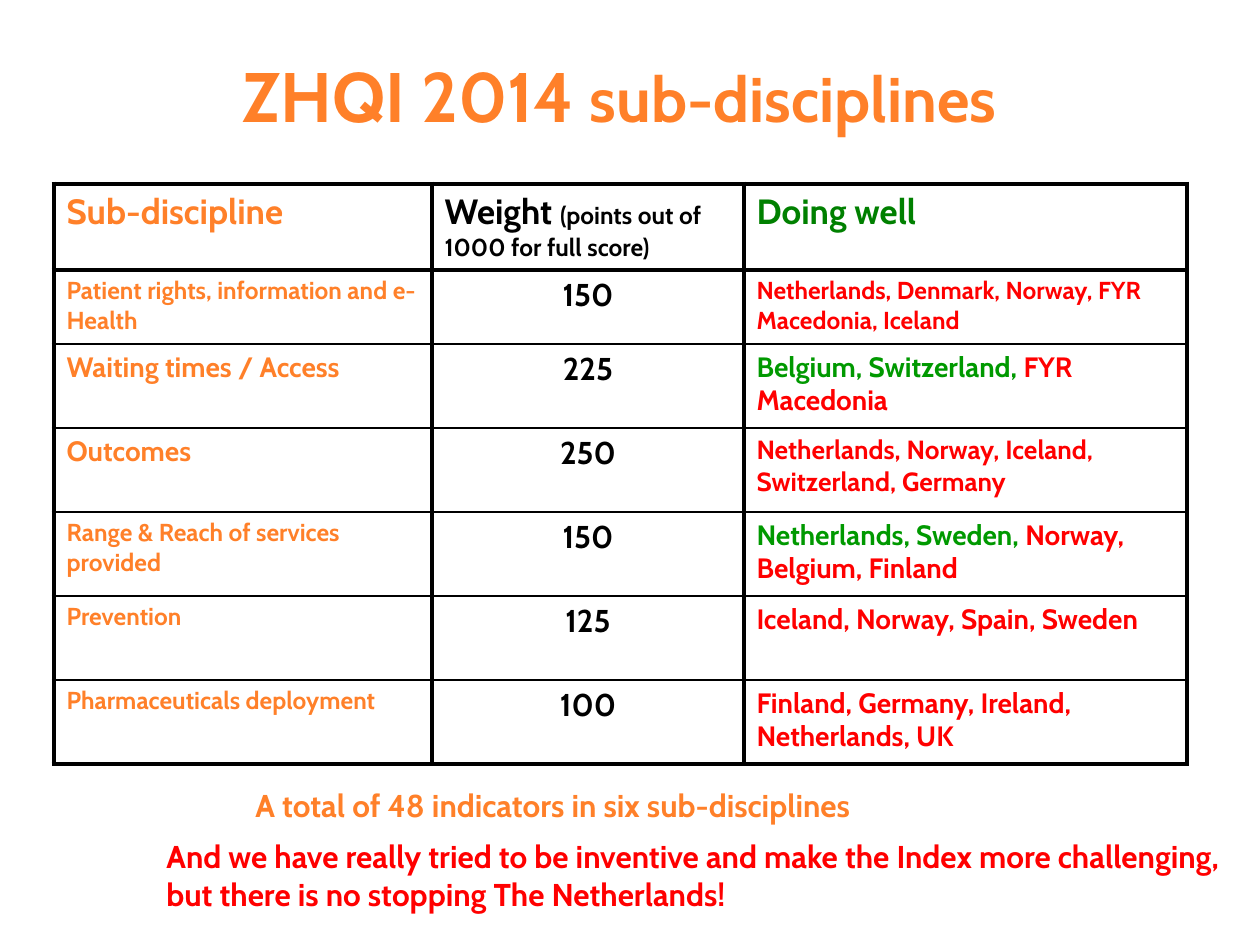
from lxml import etree
from pptx import Presentation
from pptx.dml.color import RGBColor
from pptx.enum.text import MSO_ANCHOR, MSO_AUTO_SIZE, PP_ALIGN
from pptx.oxml.ns import qn
from pptx.util import Pt

PX = 914400 // 126
FONT = "Cabin"
COLORS = {"orange": "FF8029", "black": "000000", "red": "FF0000",
          "heading green": "008000", "green": "009900", "white": "FFFFFF"}

# Content: each text is a list of (wording, size, colour) runs
TITLE = [("ZHQI 2014 ", 40, "orange"), ("sub-disciplines", 36, "orange")]
HEADINGS = [
    [("Sub-discipline", 20, "orange")],
    [("Weight ", 20, "black"), ("(points out of 1000 for full score)", 14, "black")],
    [("Doing well", 20, "heading green")],
]
# Sub-discipline, its text size, weight, countries doing well
DISCIPLINES = [
    ("Patient rights, information and e-Health", 14, 150,
     [("Netherlands, Denmark, Norway, FYR Macedonia, Iceland", 14, "red")]),
    ("Waiting times / Access", 16, 225,
     [("Belgium, Switzerland, ", 16, "green"), ("FYR Macedonia", 16, "red")]),
    ("Outcomes", 16, 250,
     [("Netherlands, Norway, Iceland, Switzerland, Germany", 15, "red")]),
    ("Range & Reach of services provided", 14, 150,
     [("Netherlands, Sweden, ", 16, "green"), ("Norway, Belgium, Finland", 16, "red")]),
    ("Prevention", 14, 125, [("Iceland, Norway, Spain, Sweden", 16, "red")]),
    ("Pharmaceuticals deployment", 14, 100,
     [("Finland, Germany, Ireland, Netherlands, UK", 16, "red")]),
]
# Wording, colour, box in px, wrapping
REMARKS = [
    ("A total of 48 indicators in six sub-disciplines", "orange",
     (243, 780, 730, 50), False),
    ("And we have really tried to be inventive and make the Index more "
     "challenging, but there is no stopping The Netherlands!", "red",
     (154, 831, 1080, 89), True),
]

# Layout in px, table rules in points
TITLE_BOX = (84, 35, 1071, 118)
TABLE_AT = (54, 184)
COLUMN_WIDTHS = [378, 312, 443]
ROW_HEIGHTS = [86, 74] + [84] * 5
FRAME, COLUMN_RULE, ROW_RULE = 3, 2.25, 1


def px(*lengths):
    return [length * PX for length in lengths]


def write(frame, runs, align=PP_ALIGN.LEFT):
    paragraph = frame.paragraphs[0]
    paragraph.alignment = align
    paragraph.font.name = FONT
    paragraph.font.bold = True
    for wording, size, color in runs:
        run = paragraph.add_run()
        run.text = wording
        run.font.size = Pt(size)
        run.font.color.rgb = RGBColor.from_string(COLORS[color])


def set_borders(cell, widths):
    properties = cell._tc.get_or_add_tcPr()
    for position, (side, width) in enumerate(widths.items()):
        line = etree.Element(qn(f"a:ln{side}"), w=str(Pt(width)))
        fill = etree.SubElement(line, qn("a:solidFill"))
        etree.SubElement(fill, qn("a:srgbClr"), val=COLORS["black"])
        properties.insert(position, line)


presentation = Presentation()
presentation.slide_width, presentation.slide_height = px(1260, 945)
slide = presentation.slides.add_slide(presentation.slide_layouts[5])

# Title
title = slide.shapes.title
title.left, title.top, title.width, title.height = px(*TITLE_BOX)
title.text_frame.vertical_anchor = MSO_ANCHOR.MIDDLE
write(title.text_frame, TITLE, PP_ALIGN.CENTER)

# Table of sub-disciplines
rows = [HEADINGS] + [
    [[(name, size, "orange")], [(str(weight), 18, "black")], countries]
    for name, size, weight, countries in DISCIPLINES
]
last_row, last_column = len(rows) - 1, len(HEADINGS) - 1
table = slide.shapes.add_table(
    len(rows), len(HEADINGS),
    *px(*TABLE_AT, sum(COLUMN_WIDTHS), sum(ROW_HEIGHTS))).table
table.first_row = table.horz_banding = False
for column, width in zip(table.columns, px(*COLUMN_WIDTHS)):
    column.width = width
for row, height in zip(table.rows, px(*ROW_HEIGHTS)):
    row.height = height

for r, texts in enumerate(rows):
    for c, runs in enumerate(texts):
        cell = table.cell(r, c)
        cell.fill.solid()
        cell.fill.fore_color.rgb = RGBColor.from_string(COLORS["white"])
        is_weight = r > 0 and c == 1
        write(cell.text_frame, runs, PP_ALIGN.CENTER if is_weight else PP_ALIGN.LEFT)
        set_borders(cell, {
            "L": FRAME if c == 0 else COLUMN_RULE,
            "R": FRAME if c == last_column else COLUMN_RULE,
            "T": FRAME if r <= 1 else ROW_RULE,
            "B": FRAME if r in (0, last_row) else ROW_RULE,
        })

# Closing remarks
for wording, color, box, wraps in REMARKS:
    remark = slide.shapes.add_textbox(*px(*box)).text_frame
    remark.word_wrap = wraps
    remark.auto_size = MSO_AUTO_SIZE.SHAPE_TO_FIT_TEXT
    write(remark, [(wording, 18, color)])

presentation.save("out.pptx")
